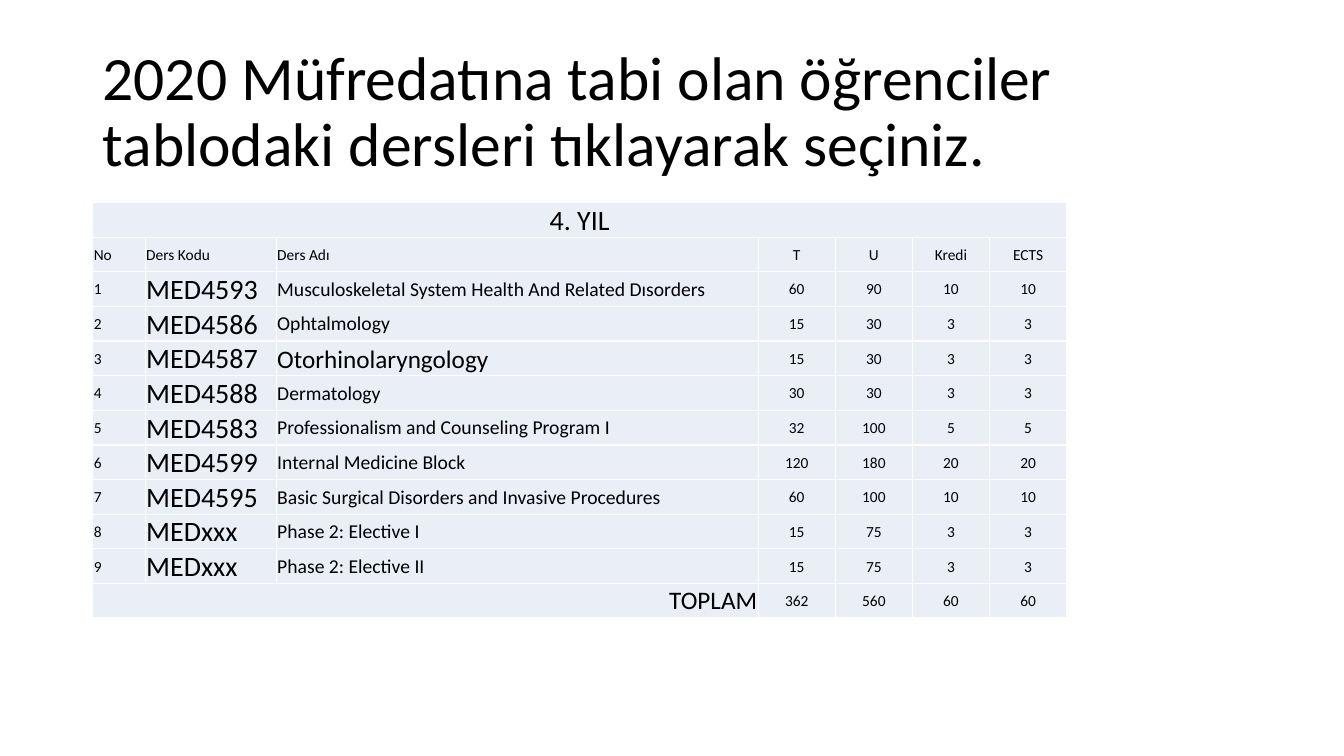
from lxml.etree import SubElement
from pptx import Presentation
from pptx.dml.color import RGBColor
from pptx.enum.text import MSO_ANCHOR as ANCHOR, PP_ALIGN as ALIGN
from pptx.oxml.ns import qn
from pptx.util import Inches, Pt

FONT = "Calibri"
BLACK, WHITE, PALE_BLUE = "000000", "FFFFFF", "EAEFF7"
TITLE = "2020 Müfredatına tabi olan öğrenciler tablodaki dersleri tıklayarak seçiniz."
YEAR = "4. YIL"
HEADERS = ["No", "Ders Kodu", "Ders Adı", "T", "U", "Kredi", "ECTS"]
COURSES = [
    ("MED4593", "Musculoskeletal System Health And Related Dısorders", 60, 90, 10, 10),
    ("MED4586", "Ophtalmology", 15, 30, 3, 3),
    ("MED4587", "Otorhinolaryngology", 15, 30, 3, 3),
    ("MED4588", "Dermatology", 30, 30, 3, 3),
    ("MED4583", "Professionalism and Counseling Program I", 32, 100, 5, 5),
    ("MED4599", "Internal Medicine Block", 120, 180, 20, 20),
    ("MED4595", "Basic Surgical Disorders and Invasive Procedures", 60, 100, 10, 10),
    ("MEDxxx", "Phase 2: Elective I", 15, 75, 3, 3),
    ("MEDxxx", "Phase 2: Elective II", 15, 75, 3, 3),
]
TOTALS = (362, 560, 60, 60)
CODE, NAME, FIRST_NUMBER = 1, 2, 3


def color(hex_value):
    return RGBColor.from_string(hex_value)


def write(tf, text, size, align=ALIGN.LEFT):
    p = tf.paragraphs[0]
    p.alignment = align
    r = p.add_run()
    r.text = str(text)
    for key, value in {"name": FONT, "size": Pt(size)}.items():
        setattr(r.font, key, value)
    r.font.color.rgb = color(BLACK)
    return p


def format_cell(cell):
    # Borders come before the fill in the cell properties
    tc_pr = cell._tc.get_or_add_tcPr()
    for side in "LRTB":
        ln = SubElement(tc_pr, qn(f"a:ln{side}"), w=str(Pt(1)))
        SubElement(SubElement(ln, qn("a:solidFill")), qn("a:srgbClr"), val=WHITE)
    cell.fill.solid()
    cell.fill.fore_color.rgb = color(PALE_BLUE)
    cell_format = {
        "vertical_anchor": ANCHOR.MIDDLE,
        "margin_left": Inches(0.01),
        "margin_right": Inches(0.01),
        "margin_top": Inches(0.01),
        "margin_bottom": 0,
    }
    for key, value in cell_format.items():
        setattr(cell, key, value)


def add_title(slide, left, top, width, height):
    box = slide.shapes.add_textbox(Inches(left), Inches(top), Inches(width), Inches(height))
    tf = box.text_frame
    tf.word_wrap = True
    tf.vertical_anchor = ANCHOR.MIDDLE
    write(tf, TITLE, 44).line_spacing = 0.9


def add_course_table(slide, left, top, width, height):
    n_rows, n_cols = len(COURSES) + 3, len(HEADERS)
    frame = slide.shapes.add_table(
        n_rows, n_cols, Inches(left), Inches(top), Inches(width), Inches(height))
    table = frame.table
    table.first_row = table.horz_banding = False

    # The number columns share what the text columns leave
    text_widths = [0.52, 1.3, 4.78]
    n_numbers = n_cols - len(text_widths)
    number_width = (width - sum(text_widths)) / n_numbers
    for column, w in zip(table.columns, text_widths + [number_width] * n_numbers):
        column.width = Inches(w)
    for cell in table.iter_cells():
        format_cell(cell)

    # Year banner
    banner = table.cell(0, 0)
    banner.merge(table.cell(0, n_cols - 1))
    write(banner.text_frame, YEAR, 20, ALIGN.CENTER)

    # Header and courses
    sizes = {CODE: 20, NAME: 14}
    rows = [HEADERS] + [(no, *course) for no, course in enumerate(COURSES, 1)]
    for i, row in enumerate(rows, 1):
        for j, text in enumerate(row):
            cell = table.cell(i, j)
            size = 11 if row is HEADERS else sizes.get(j, 11)
            if text == "Otorhinolaryngology":
                size = 18
                cell.vertical_anchor = ANCHOR.BOTTOM
            align = ALIGN.CENTER if j >= FIRST_NUMBER else ALIGN.LEFT
            write(cell.text_frame, text, size, align)

    # Totals
    last = n_rows - 1
    label = table.cell(last, 0)
    label.merge(table.cell(last, NAME))
    write(label.text_frame, "TOPLAM", 18, ALIGN.RIGHT)
    for j, total in enumerate(TOTALS, FIRST_NUMBER):
        write(table.cell(last, j).text_frame, total, 11, ALIGN.CENTER)


def main():
    prs = Presentation()
    prs.slide_width, prs.slide_height = Inches(13.33), Inches(7.5)
    slide = prs.slides.add_slide(prs.slide_layouts[6])
    add_title(slide, 0.92, 0.4, 11.5, 1.45)
    add_course_table(slide, 0.92, 2.01, 9.66, 4.11)
    prs.save("out.pptx")


if __name__ == "__main__":
    main()
